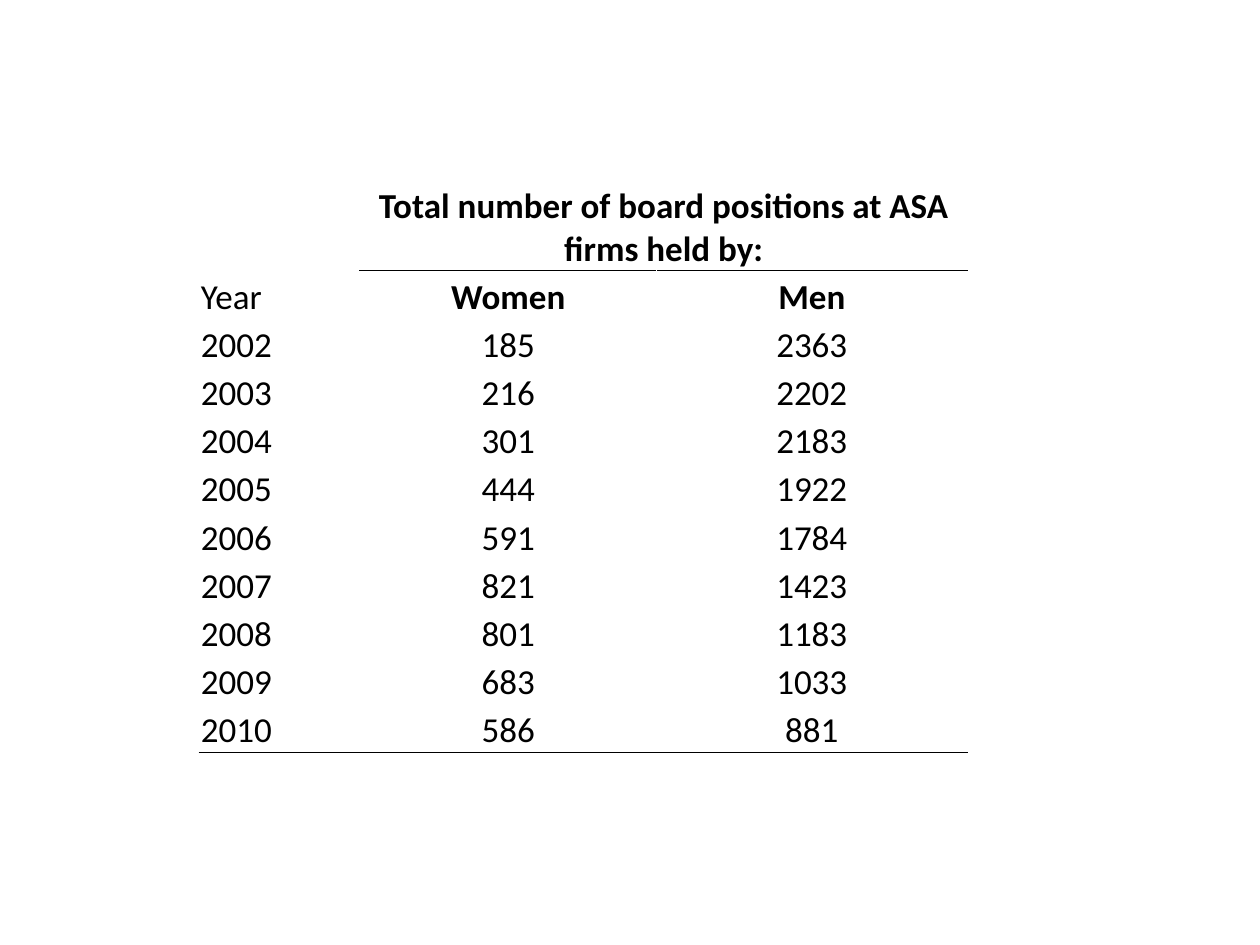
import lxml.etree
import pptx
import pptx.dml.color
import pptx.enum.text
import pptx.oxml.ns
import pptx.util

Cm = pptx.util.Cm
ALIGN = pptx.enum.text.PP_ALIGN
BLACK = "000000"
COLUMN_WIDTHS = [3.24, 5.97, 6.27]
HEADING_HEIGHT = 2.08
ROW_HEIGHT = 0.97
HEADING = "Total number of board positions at ASA firms held by:"
BOARD_POSITIONS = [
    ("Year", "Women", "Men"),
    (2002, 185, 2363),
    (2003, 216, 2202),
    (2004, 301, 2183),
    (2005, 444, 1922),
    (2006, 591, 1784),
    (2007, 821, 1423),
    (2008, 801, 1183),
    (2009, 683, 1033),
    (2010, 586, 881),
]
CELL_FORMAT = {
    "margin_left": Cm(0.03),
    "margin_right": Cm(0.03),
    "margin_top": Cm(0.03),
    "margin_bottom": 0,
    "vertical_anchor": pptx.enum.text.MSO_ANCHOR.BOTTOM,
}


def set_attributes(target, values):
    for name, value in values.items():
        setattr(target, name, value)


def color(value):
    return pptx.dml.color.RGBColor.from_string(value)


def write_cell(cell, text, bold, alignment):
    paragraph = cell.text_frame.paragraphs[0]
    paragraph.alignment = alignment
    run = paragraph.add_run()
    run.text = str(text)
    set_attributes(run.font, {"name": "Calibri", "size": pptx.util.Pt(20), "bold": bold})
    run.font.color.rgb = color(BLACK)


def add_border(cell, side):
    qn = pptx.oxml.ns.qn
    line = lxml.etree.Element(qn(f"a:ln{side}"), w=str(pptx.util.Pt(0.5)))
    fill = lxml.etree.SubElement(line, qn("a:solidFill"))
    lxml.etree.SubElement(fill, qn("a:srgbClr"), val=BLACK)
    cell._tc.get_or_add_tcPr().insert(0, line)


def add_rule(table, row, columns):
    for column in columns:
        add_border(table.cell(row, column), "B")
        add_border(table.cell(row + 1, column), "T")


def add_board_table(slide):
    heights = [HEADING_HEIGHT] + [ROW_HEIGHT] * (len(BOARD_POSITIONS) + 1)
    table = slide.shapes.add_table(
        len(heights), len(COLUMN_WIDTHS), Cm(4.02), Cm(3.38),
        Cm(sum(COLUMN_WIDTHS)), Cm(sum(heights)),
    ).table
    set_attributes(table, {"first_row": False, "horz_banding": False})
    for column, width in zip(table.columns, COLUMN_WIDTHS):
        column.width = Cm(width)
    for row, height in zip(table.rows, heights):
        row.height = Cm(height)
    for cell in table.iter_cells():
        set_attributes(cell, CELL_FORMAT)
        cell.fill.background()

    table.cell(0, 1).merge(table.cell(0, 2))
    write_cell(table.cell(0, 1), HEADING, True, ALIGN.CENTER)
    for row, values in enumerate(BOARD_POSITIONS, start=1):
        for column, value in enumerate(values):
            bold = row == 1 and column > 0
            alignment = ALIGN.CENTER if column else ALIGN.LEFT
            write_cell(table.cell(row, column), value, bold, alignment)
    add_rule(table, 0, [1, 2])
    add_rule(table, len(BOARD_POSITIONS), range(len(COLUMN_WIDTHS)))


def main():
    presentation = pptx.Presentation()
    set_attributes(presentation, {"slide_width": Cm(25.4), "slide_height": Cm(19.05)})
    slide = presentation.slides.add_slide(presentation.slide_layouts[6])
    add_board_table(slide)
    presentation.save("out.pptx")


if __name__ == "__main__":
    main()
